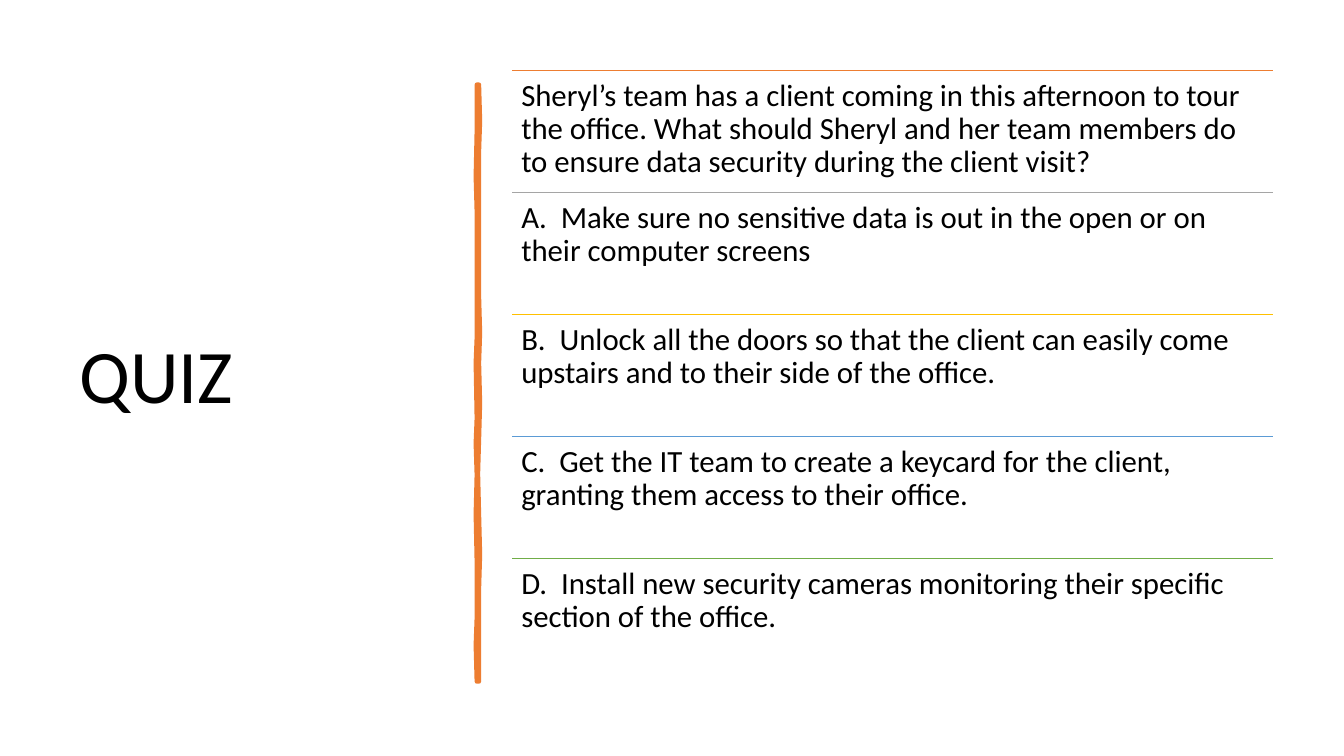
from dataclasses import dataclass

from lxml.etree import SubElement
from pptx import Presentation
from pptx.dml.color import RGBColor
from pptx.enum.shapes import MSO_CONNECTOR
from pptx.enum.text import MSO_ANCHOR
from pptx.oxml.ns import qn
from pptx.util import Inches, Pt

FONT = "Calibri"
BLACK = "000000"
ORANGE = "ED7D31"
LIST_LEFT, LIST_TOP = 5.08, 0.7
LIST_WIDTH, ROW_HEIGHT = 7.55, 1.21

# (x, y) down the right edge of the brush stroke, then up the left edge
STROKE = [
    (4.75, 0.84), (4.76, 1.2), (4.75, 1.5), (4.75, 2.26), (4.75, 2.94),
    (4.76, 3.3), (4.75, 3.6), (4.76, 4.0), (4.75, 4.36), (4.74, 4.7),
    (4.75, 5.1), (4.76, 5.5), (4.75, 5.84), (4.75, 6.3), (4.75, 6.76),
    (4.73, 6.76), (4.72, 6.4), (4.73, 6.13), (4.73, 5.57), (4.72, 5.1),
    (4.73, 4.71), (4.72, 4.4), (4.73, 4.15), (4.72, 3.6), (4.73, 3.35),
    (4.73, 2.5), (4.73, 2.1), (4.72, 1.75), (4.73, 1.3), (4.73, 0.84),
]


@dataclass(frozen=True)
class Row:
    text: str
    rule_color: str


ROWS = [
    Row("Sheryl’s team has a client coming in this afternoon to tour the office. "
        "What should Sheryl and her team members do to ensure data security "
        "during the client visit?", ORANGE),
    Row("A.  Make sure no sensitive data is out in the open or on their "
        "computer screens", "A5A5A5"),
    Row("B.  Unlock all the doors so that the client can easily come upstairs "
        "and to their side of the office.", "FFC000"),
    Row("C.  Get the IT team to create a keycard for the client, granting them "
        "access to their office.", "5B9BD5"),
    Row("D.  Install new security cameras monitoring their specific section of "
        "the office.", "70AD47"),
]


def rgb(color: str) -> RGBColor:
    return RGBColor.from_string(color)


def add_text(s, text: str, left: float, top: float, width: float, height: float,
             size: float, anchor: MSO_ANCHOR, inset: float) -> None:
    sp = s.shapes.add_textbox(*map(Inches, (left, top, width, height)))
    tf = sp.text_frame
    tf.word_wrap = True
    tf.vertical_anchor = anchor
    tf.margin_left = tf.margin_top = tf.margin_right = tf.margin_bottom = Inches(inset)
    p = tf.paragraphs[0]
    p.text = text
    p.line_spacing = 0.9
    p.font.name = FONT
    p.font.size = Pt(size)
    p.font.color.rgb = rgb(BLACK)


def add_rule(s, top: float, color: str) -> None:
    line = s.shapes.add_connector(
        MSO_CONNECTOR.STRAIGHT, Inches(LIST_LEFT), Inches(top),
        Inches(LIST_LEFT + LIST_WIDTH), Inches(top))
    line.line.color.rgb = rgb(color)
    line.line.width = Pt(1)
    SubElement(line._element.spPr, qn("a:effectLst"))


def add_stroke(s) -> None:
    points = [(Inches(x), Inches(y)) for x, y in STROKE]
    builder = s.shapes.build_freeform(*points[0])
    builder.add_line_segments(points[1:], close=True)
    sp = builder.convert_to_shape()
    sp.shadow.inherit = False
    sp.fill.solid()
    sp.fill.fore_color.rgb = rgb(ORANGE)
    sp.line.color.rgb = rgb(ORANGE)
    sp.line.width = Pt(3.25)
    # Round joins soften the ends of the stroke
    SubElement(sp.line._get_or_add_ln(), qn("a:round"))


def main() -> None:
    prs = Presentation()
    prs.slide_width, prs.slide_height = Inches(13.33), Inches(7.5)
    s = prs.slides.add_slide(prs.slide_layouts[6])

    add_text(s, "QUIZ", 0.69, 0.7, 3.74, 6.11, 54, MSO_ANCHOR.MIDDLE, 0.1)
    add_stroke(s)
    for i, row in enumerate(ROWS):
        top = LIST_TOP + i * ROW_HEIGHT
        add_rule(s, top, row.rule_color)
        add_text(s, row.text, LIST_LEFT, top, LIST_WIDTH, ROW_HEIGHT, 22,
                 MSO_ANCHOR.TOP, 0.09)

    prs.save("out.pptx")


if __name__ == "__main__":
    main()
